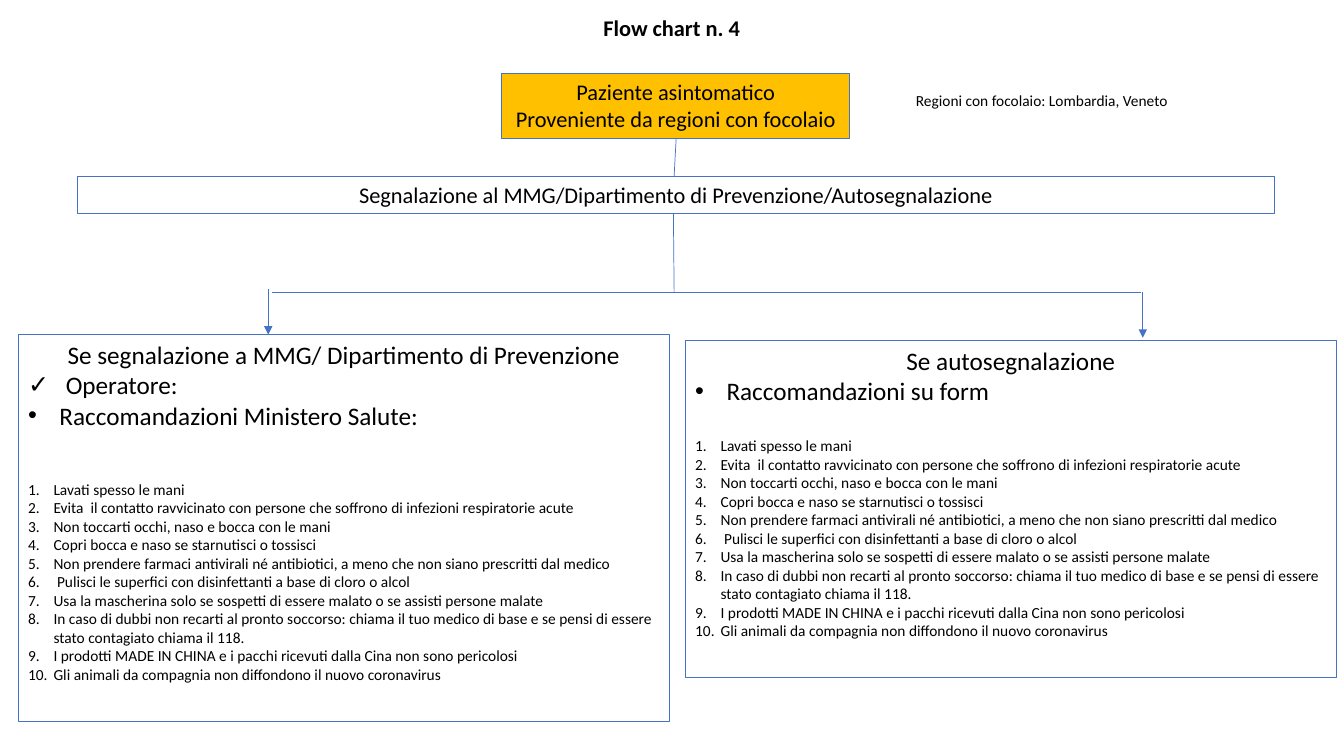
from lxml.etree import SubElement
from pptx import Presentation
from pptx.dml.color import RGBColor
from pptx.enum.shapes import MSO_CONNECTOR, MSO_SHAPE
from pptx.enum.text import MSO_ANCHOR, PP_ALIGN
from pptx.oxml.ns import qn
from pptx.util import Cm, Pt

COLORS = {"text": "000000", "line": "4472C4", "patient": "FFC000"}
FONT = "Calibri"

ADVICE = [
    "Lavati spesso le mani",
    "Evita  il contatto ravvicinato con persone che soffrono di infezioni respiratorie acute",
    "Non toccarti occhi, naso e bocca con le mani",
    "Copri bocca e naso se starnutisci o tossisci",
    "Non prendere farmaci antivirali né antibiotici, a meno che non siano prescritti dal medico",
    " Pulisci le superfici con disinfettanti a base di cloro o alcol",
    "Usa la mascherina solo se sospetti di essere malato o se assisti persone malate",
    "In caso di dubbi non recarti al pronto soccorso: chiama il tuo medico di base "
    "e se pensi di essere stato contagiato chiama il 118.",
    "I prodotti MADE IN CHINA e i pacchi ricevuti dalla Cina non sono pericolosi",
    "Gli animali da compagnia non diffondono il nuovo coronavirus",
]


def add_box(place, lines, size, fill=None, outlined=True, align=PP_ALIGN.CENTER):
    """Add a top-anchored rectangle holding one paragraph per line."""
    box = slide.shapes.add_shape(MSO_SHAPE.RECTANGLE, *[Cm(length) for length in place])
    box.shadow.inherit = False
    if fill:
        box.fill.solid()
        box.fill.fore_color.rgb = RGBColor.from_string(COLORS[fill])
    else:
        box.fill.background()
    if outlined:
        box.line.color.rgb = RGBColor.from_string(COLORS["line"])
        box.line.width = Pt(0.75)
    else:
        box.line.fill.background()
    frame = box.text_frame
    frame.word_wrap = True
    frame.vertical_anchor = MSO_ANCHOR.TOP
    frame.text = "\n".join(lines)
    for paragraph in frame.paragraphs:
        paragraph.alignment = align
        for run in paragraph.runs:
            run.font.name = FONT
            run.font.size = Pt(size)
            run.font.color.rgb = RGBColor.from_string(COLORS["text"])
    return frame.paragraphs


def set_bullet(paragraph, indent, mark=None):
    """Hang the paragraph on a bullet character, or on a number if no mark is given."""
    paragraph.alignment = PP_ALIGN.LEFT
    properties = paragraph._p.get_or_add_pPr()
    properties.set("marL", str(Cm(indent)))
    properties.set("indent", str(-Cm(indent)))
    if mark:
        SubElement(properties, qn("a:buFont")).set("typeface", "Arial")
        SubElement(properties, qn("a:buChar")).set("char", mark)
    else:
        SubElement(properties, qn("a:buFont")).set("typeface", "+mj-lt")
        SubElement(properties, qn("a:buAutoNum")).set("type", "arabicPeriod")


presentation = Presentation()
presentation.slide_width = Cm(33.87)
presentation.slide_height = Cm(19.05)
slide = presentation.slides.add_slide(presentation.slide_layouts[6])

title = add_box((3, 0.23, 27.86, 1.63), ["Flow chart n. 4"], 16, outlined=False)
title[0].runs[0].font.bold = True
add_box((12.65, 1.85, 8.76, 1.63),
        ["Paziente asintomatico", "Proveniente da regioni con focolaio"], 16, fill="patient")
add_box((1.96, 4.45, 30.15, 0.94),
        ["Segnalazione al MMG/Dipartimento di Prevenzione/Autosegnalazione"], 16)
add_box((22.83, 2.18, 10.21, 0.74), ["Regioni con focolaio: Lombardia, Veneto"], 11,
        outlined=False, align=PP_ALIGN.LEFT)

# Place, heading, bullets (text, mark, indent), gap before the advice
branches = [
    ((0.46, 8.43, 16.41, 9.75), "Se segnalazione a MMG/ Dipartimento di Prevenzione",
     [("Operatore:", "✓", 0.95), ("Raccomandazioni Ministero Salute:", "•", 0.79)], 35.4),
    ((17.27, 8.57, 16.41, 8.5), "Se autosegnalazione",
     [("Raccomandazioni su form", "•", 0.79)], 22),
]
for place, heading, bullets, gap in branches:
    paragraphs = add_box(place, [heading] + [text for text, _, _ in bullets] + ADVICE, 18)
    first_advice = 1 + len(bullets)
    for paragraph, (_, mark, indent) in zip(paragraphs[1:], bullets):
        set_bullet(paragraph, indent, mark)
    paragraphs[first_advice].space_before = Pt(gap)
    for paragraph in paragraphs[first_advice:]:
        set_bullet(paragraph, 0.64)
        paragraph.runs[0].font.size = Pt(11)

# Start x, start y, end x, end y, arrowhead at the end
links = [
    (17.04, 3.48, 16.99, 4.43, False),
    (16.97, 5.38, 16.99, 7.37, False),
    (6.86, 7.37, 28.75, 7.37, False),
    (6.76, 7.29, 6.76, 8.43, True),
    (28.8, 7.37, 28.8, 8.51, True),
]
for *ends, has_arrow in links:
    link = slide.shapes.add_connector(MSO_CONNECTOR.STRAIGHT, *[Cm(end) for end in ends])
    link.line.color.rgb = RGBColor.from_string(COLORS["line"])
    link.line.width = Pt(0.5)
    if has_arrow:
        SubElement(link.line._get_or_add_ln(), qn("a:tailEnd")).set("type", "triangle")
    SubElement(link._element.spPr, qn("a:effectLst"))

presentation.save("out.pptx")
